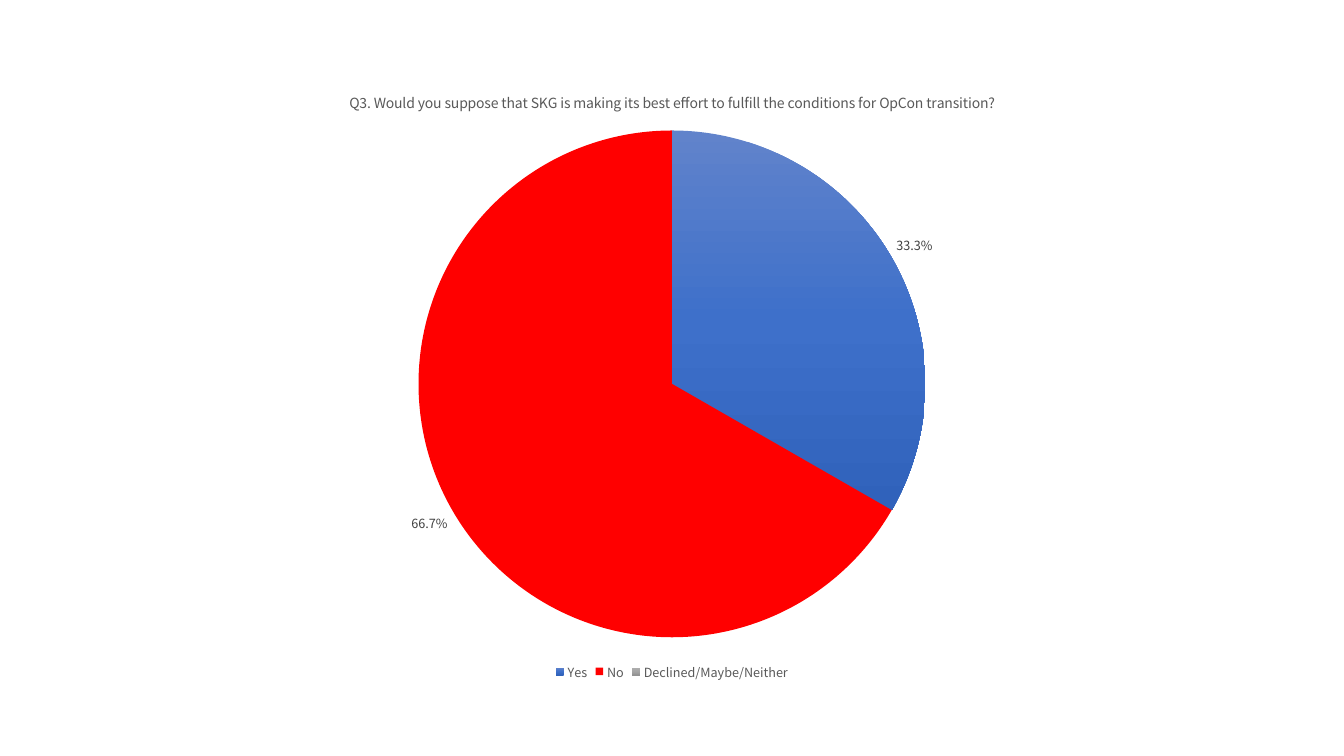
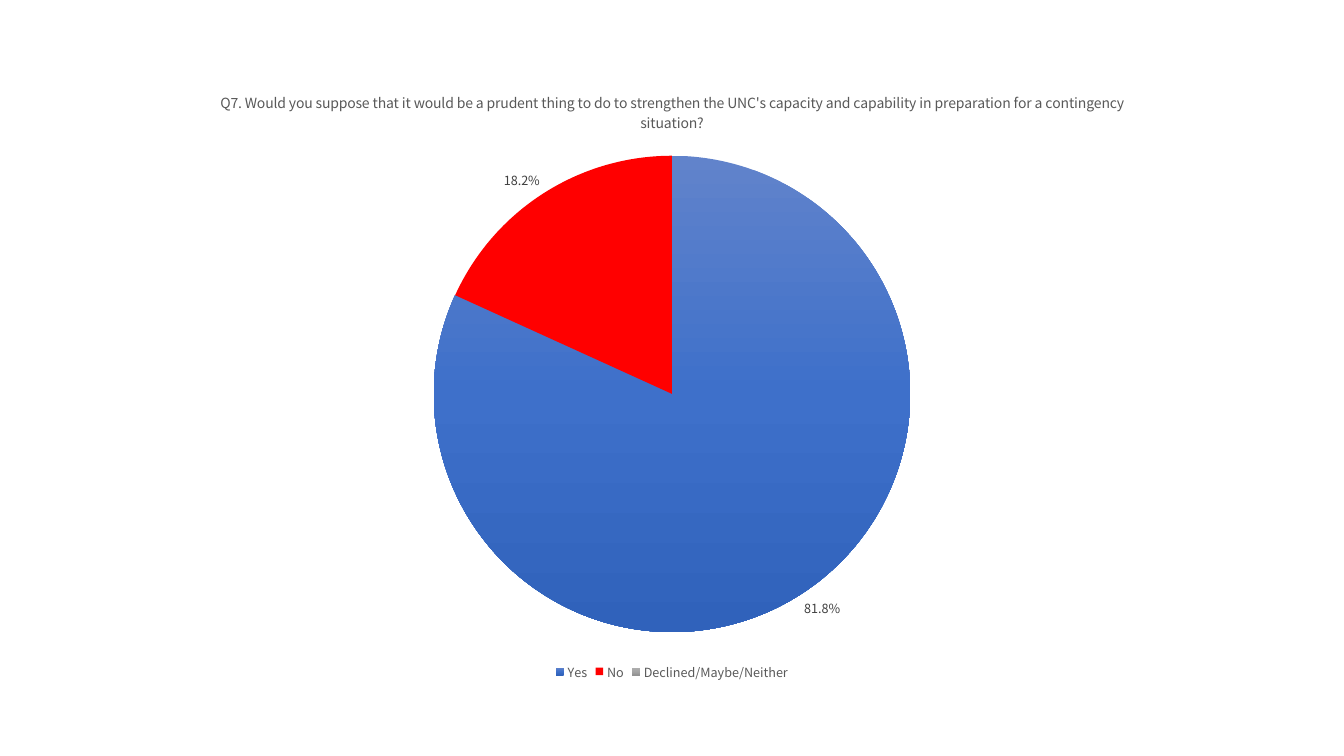
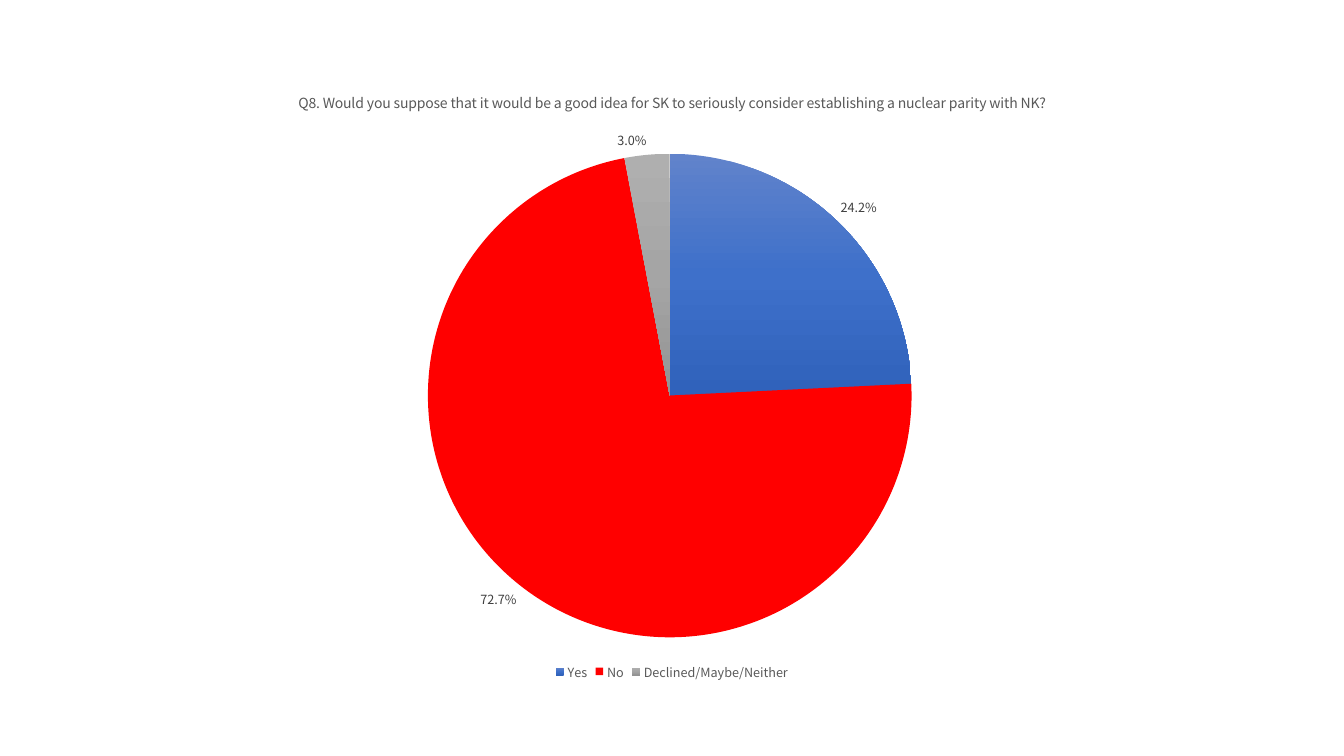
from copy import deepcopy

from lxml import etree
from pptx import Presentation
from pptx.chart.data import CategoryChartData
from pptx.dml.color import RGBColor
from pptx.enum.chart import XL_CHART_TYPE, XL_LABEL_POSITION, XL_LEGEND_POSITION
from pptx.oxml import parse_xml
from pptx.oxml.ns import nsdecls, qn
from pptx.util import Inches, Pt

# Content: number, question, shares per answer
ANSWERS = ["Yes", "No", "Declined/Maybe/Neither"]
QUESTIONS = [
    ("Q3.", "Would you suppose that SKG is making its best effort to fulfill "
     "the conditions for OpCon transition?", (0.333, 0.667, 0)),
    ("Q7.", "Would you suppose that it would be a prudent thing to do to strengthen "
     "the UNC's capacity and capability in preparation for a contingency situation?",
     (0.818, 0.182, 0)),
    ("Q8.", "Would you suppose that it would be a good idea for SK to seriously "
     "consider establishing a nuclear parity with NK?", (0.242, 0.727, 0.03)),
]

# Shared style; one colour is a solid fill, three make a gradient
FONT = "Noto Sans CJK KR"
TEXT, LABEL = "595959", "404040"
ANSWER_FILLS = [("6183CB", "3E70CA", "3062BB"), ("FF0000",), ("AFAFAF", "A5A5A5", "939393")]
EM_SPACE = " "
SLIDE_W, SLIDE_H = 13.33, 7.5
LEFT, TOP, CHART_H = 0.7, 0.7, 6.09


def rgb(color):
    return RGBColor.from_string(color)


def style_font(font, size, color):
    font.name, font.size, font.bold = FONT, Pt(size), False
    font.color.rgb = rgb(color)


def write_text(tf, text, size, color):
    p = tf.paragraphs[0]
    r = p.add_run()
    r.text = text
    style_font(r.font, size, color)
    etree.SubElement(r.font._element, qn("a:ea")).set("typeface", FONT)


def fill_slice(series, index, colors):
    fill = series.points[index].format.fill
    if len(colors) == 1:
        fill.solid()
        fill.fore_color.rgb = rgb(colors[0])
        return
    fill.gradient()
    fill.gradient_angle = 270
    stops = series._element.xpath(f"c:dPt[c:idx/@val='{index}']//a:gsLst")[0]
    stops.append(deepcopy(stops[-1]))
    for i, (stop, color) in enumerate(zip(fill.gradient_stops, colors)):
        stop.position = i / (len(colors) - 1)
        stop.color.rgb = rgb(color)


def label_slices(series, shares):
    labels = series.data_labels
    labels.show_value = True
    labels.number_format, labels.number_format_is_linked = "0.0%", False
    labels.position = XL_LABEL_POSITION.OUTSIDE_END
    style_font(labels.font, 9, LABEL)
    # An answer nobody gave has no label
    empty = [i for i, share in enumerate(shares) if share == 0]
    for place, i in enumerate(empty):
        labels._element.insert(place, parse_xml(
            f'<c:dLbl {nsdecls("c")}><c:idx val="{i}"/><c:delete val="1"/></c:dLbl>'))


def add_pie(s, title, shares):
    data = CategoryChartData(number_format="0.0%")
    data.categories = ANSWERS
    data.add_series(title, shares)
    chart = s.shapes.add_chart(
        XL_CHART_TYPE.PIE, Inches(LEFT), Inches(TOP),
        Inches(SLIDE_W - 2 * LEFT), Inches(CHART_H), data).chart
    style_font(chart.font, 10, "000000")

    # Title and legend
    chart.has_title = True
    write_text(chart.chart_title.text_frame, title, 10, TEXT)
    chart.has_legend = True
    chart.legend.position = XL_LEGEND_POSITION.BOTTOM
    chart.legend.include_in_layout = False
    style_font(chart.legend.font, 9, TEXT)

    # Slices
    plot = chart.plots[0]
    plot.vary_by_categories = True
    series = plot.series[0]
    for i, colors in enumerate(ANSWER_FILLS):
        fill_slice(series, i, colors)
    label_slices(series, shares)


def main():
    prs = Presentation()
    prs.slide_width, prs.slide_height = Inches(SLIDE_W), Inches(SLIDE_H)
    blank = prs.slide_layouts[6]
    for number, question, shares in QUESTIONS:
        add_pie(prs.slides.add_slide(blank), number + EM_SPACE + question, shares)
    prs.save("out.pptx")


if __name__ == "__main__":
    main()
